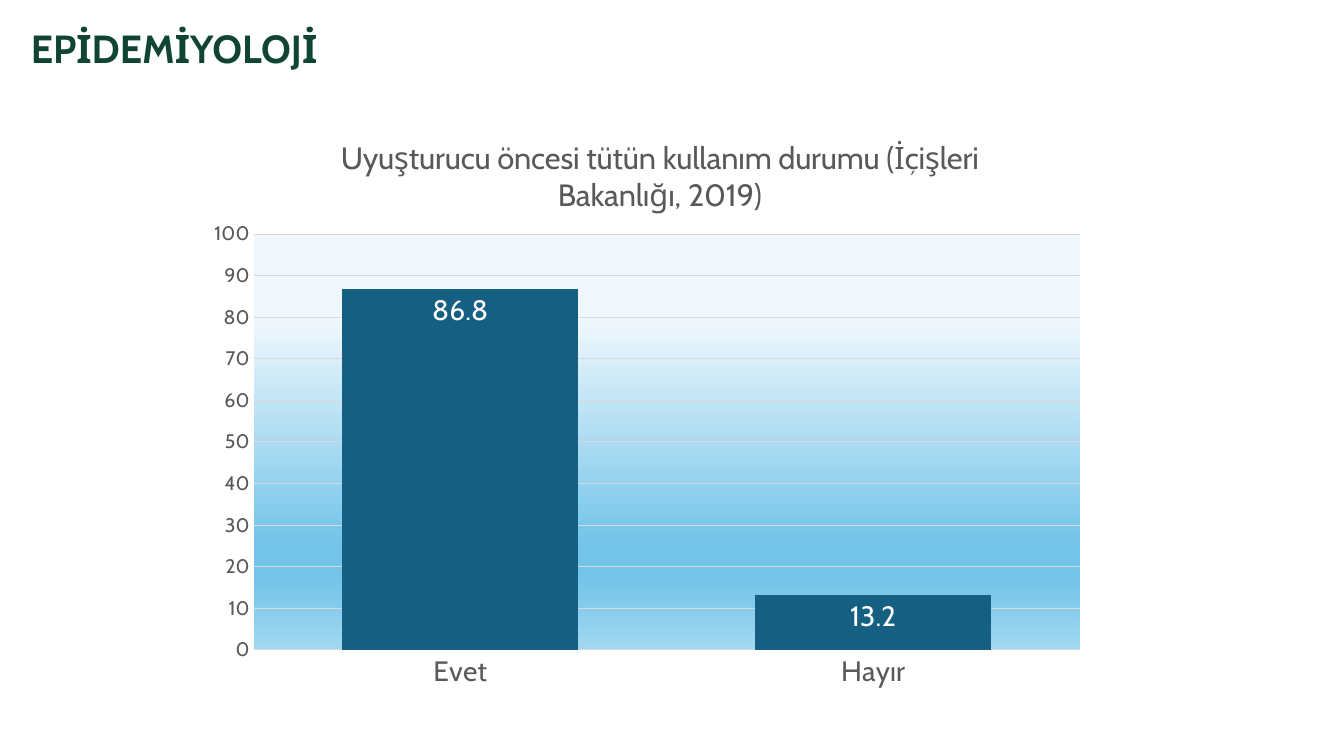
from lxml.etree import SubElement
from pptx import Presentation
from pptx.chart.data import CategoryChartData
from pptx.dml.color import RGBColor
from pptx.enum.chart import XL_CHART_TYPE, XL_LABEL_POSITION, XL_TICK_MARK
from pptx.oxml import parse_xml
from pptx.oxml.ns import nsdecls, qn
from pptx.util import Cm, Pt

HEADING = "EPİDEMİYOLOJİ"
CHART_TITLE = "Uyuşturucu öncesi tütün kullanım durumu (İçişleri Bakanlığı, 2019)"
ANSWERS = {"Evet": 86.8, "Hayır": 13.2}
FONT = "Cabin"
COLORS = {"heading": "114533", "text": "595959", "grid": "D9D9D9", "bar": "156082", "label": "FFFFFF"}
PLOT_GRADIENT = [(20, "F0F8FD"), (74, "74C4E9"), (83, "74C4E9"), (100, "A2D8F0")]

# Left, top, width, height in centimetres
HEADING_AREA = (0.53, 0.48, 26.87, 1.45)
CHART_AREA = (4.95, 2.77, 22.71, 14.91)
PLOT_AREA = (6.4, 5.9, 20.81, 10.48)
TITLE_CORNER = (8.45, 3.3)


def color(name):
    return RGBColor.from_string(COLORS[name])


def style_font(font, size, color_name, bold=False):
    for key, value in {"name": FONT, "size": Pt(size), "bold": bold}.items():
        setattr(font, key, value)
    font.color.rgb = color(color_name)


def style_line(line, color_name):
    line.width = Pt(0.75)
    line.color.rgb = color(color_name)


def manual_layout(area, inner=False):
    """Return a layout that places a chart part at slide positions."""
    left, top, width, height = CHART_AREA
    shares = dict(zip("xywh", ((area[0] - left) / width, (area[1] - top) / height)))
    if inner:
        shares.update(w=area[2] / width, h=area[3] / height)
    layout = parse_xml(f"<c:layout {nsdecls('c')}/>")
    manual = SubElement(layout, qn("c:manualLayout"))
    settings = [("layoutTarget", "inner")] if inner else []
    settings += [("xMode", "edge"), ("yMode", "edge")]
    settings += [(key, f"{share:.4f}") for key, share in shares.items()]
    for tag, value in settings:
        SubElement(manual, qn(f"c:{tag}")).set("val", value)
    return layout


def replace_layout(parent, layout, index):
    for old in parent.findall(qn("c:layout")):
        parent.remove(old)
    parent.insert(index, layout)


def plot_background():
    stops = "".join(
        f'<a:gs pos="{percent * 1000}"><a:srgbClr val="{value}"/></a:gs>'
        for percent, value in PLOT_GRADIENT
    )
    return parse_xml(
        f"<c:spPr {nsdecls('c', 'a')}><a:gradFill><a:gsLst>{stops}</a:gsLst>"
        '<a:lin ang="5400000" scaled="0"/></a:gradFill><a:ln><a:noFill/></a:ln></c:spPr>'
    )


def add_heading(page):
    box = page.shapes.add_textbox(*map(Cm, HEADING_AREA))
    box.text_frame.word_wrap = True
    span = box.text_frame.paragraphs[0].add_run()
    span.text = HEADING
    style_font(span.font, 28, "heading", bold=True)


def style_axes(chart):
    for axis, size in ((chart.category_axis, 20), (chart.value_axis, 14)):
        axis.major_tick_mark = axis.minor_tick_mark = XL_TICK_MARK.NONE
        style_font(axis.tick_labels.font, size, "text")
    style_line(chart.category_axis.format.line, "grid")
    scale = chart.value_axis
    limits = {"minimum_scale": 0, "maximum_scale": 100, "major_unit": 10}
    for key, value in limits.items():
        setattr(scale, key, value)
    scale.format.line.fill.background()
    style_line(scale.major_gridlines.format.line, "grid")


def style_bars(plot):
    for key, value in {"gap_width": 75, "overlap": 40, "vary_by_categories": False}.items():
        setattr(plot, key, value)
    bars = plot.series[0]
    bars.format.fill.solid()
    bars.format.fill.fore_color.rgb = color("bar")
    labels = bars.data_labels
    labels.show_value = True
    labels.position = XL_LABEL_POSITION.INSIDE_END
    style_font(labels.font, 20, "label")


def add_usage_chart(page):
    data = CategoryChartData()
    data.categories = list(ANSWERS)
    data.add_series("Series 1", list(ANSWERS.values()))
    frame = page.shapes.add_chart(XL_CHART_TYPE.COLUMN_CLUSTERED, *map(Cm, CHART_AREA), data)
    chart = frame.chart
    chart.has_legend = False
    chart.font.name, chart.font.size = FONT, Pt(10)
    title = chart.chart_title
    span = title.text_frame.paragraphs[0].add_run()
    span.text = CHART_TITLE
    style_font(span.font, 22, "text")
    title.include_in_layout = False
    style_axes(chart)
    style_bars(chart.plots[0])

    title_element = chart.element.find(".//" + qn("c:title"))
    replace_layout(title_element, manual_layout(TITLE_CORNER), 1)
    plot_element = chart.element.find(".//" + qn("c:plotArea"))
    replace_layout(plot_element, manual_layout(PLOT_AREA, inner=True), 0)
    plot_element.append(plot_background())


def main():
    deck = Presentation()
    deck.slide_width, deck.slide_height = Cm(33.87), Cm(19.05)
    page = deck.slides.add_slide(deck.slide_layouts[6])
    add_heading(page)
    add_usage_chart(page)
    deck.save("out.pptx")


if __name__ == "__main__":
    main()
